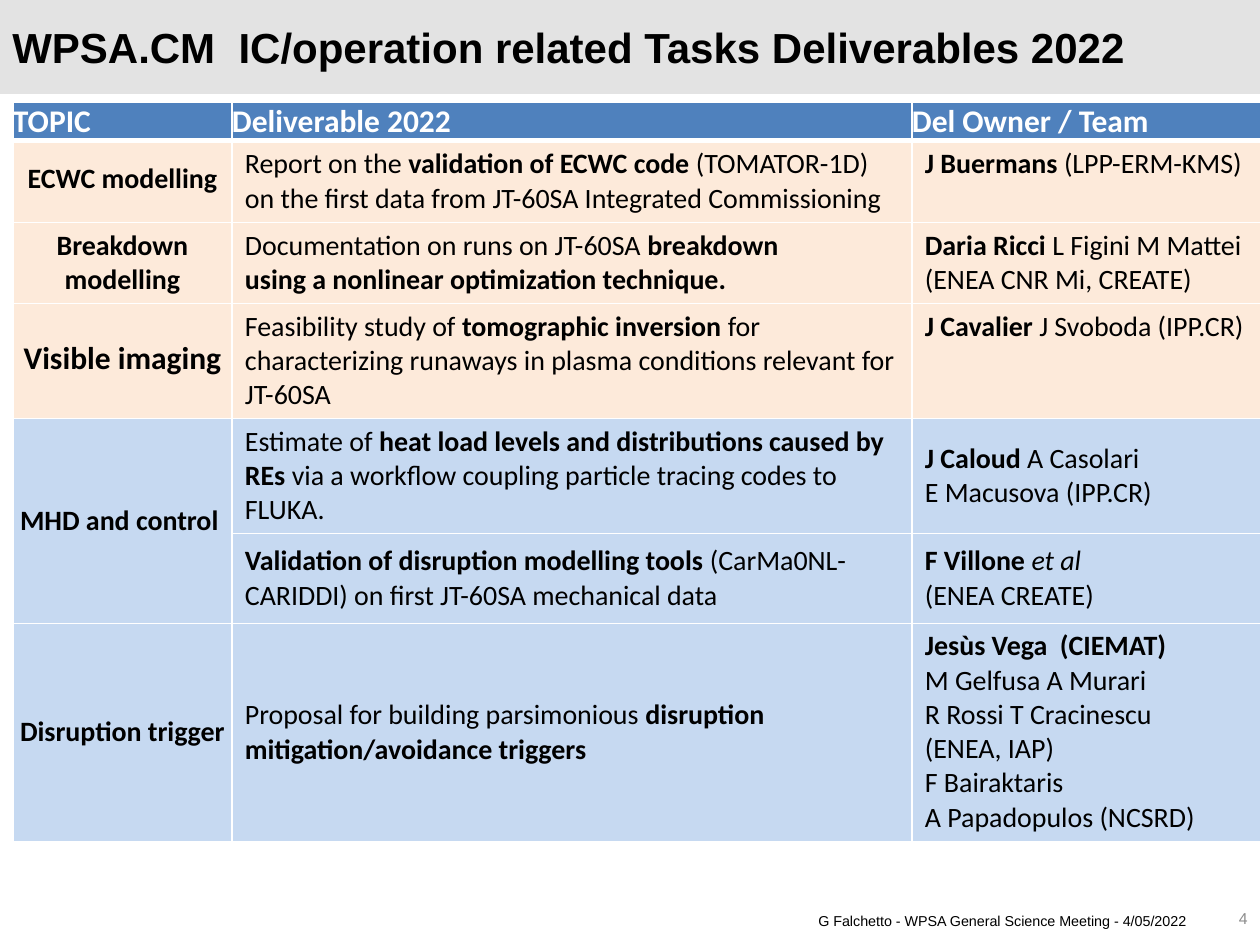
from dataclasses import dataclass

from lxml import etree
from pptx import Presentation
from pptx.dml.color import RGBColor
from pptx.enum import shapes, text
from pptx.oxml import ns
from pptx.util import Pt

PX = 914400 // 126  # EMU in one px

BLACK = RGBColor(0x00, 0x00, 0x00)
WHITE = RGBColor(0xFF, 0xFF, 0xFF)
BAND_GREY = RGBColor(0xE3, 0xE3, 0xE3)
NUMBER_GREY = RGBColor(0x8C, 0x8C, 0x8C)
HEADER_BLUE = RGBColor(0x4F, 0x81, 0xBD)
PEACH = RGBColor(0xFD, 0xEA, 0xDA)
PALE_BLUE = RGBColor(0xC6, 0xD9, 0xF1)

TOP, MIDDLE = text.MSO_ANCHOR.TOP, text.MSO_ANCHOR.MIDDLE
LEFT, CENTER, RIGHT = text.PP_ALIGN.LEFT, text.PP_ALIGN.CENTER, text.PP_ALIGN.RIGHT


@dataclass
class Span:
    text: str
    bold: bool = False
    italic: bool = False


@dataclass
class Entry:
    """One table cell: a list of paragraphs, each a list of spans."""
    paras: list[list[Span]]
    anchor: text.MSO_ANCHOR = MIDDLE
    align: text.PP_ALIGN = LEFT
    size: int = 16
    color: RGBColor = BLACK
    margins: tuple[int, int, int, int] = (13, 6, 13, 6)


@dataclass
class Row:
    height: int
    fill: RGBColor
    entries: list[Entry | None]  # None continues the cell above
    bottom_line: int = 1


@dataclass
class Label:
    text: str
    frame: tuple[int, int, int, int]
    size: float
    color: RGBColor
    align: text.PP_ALIGN = RIGHT
    bold: bool = False
    line_spacing: int | None = None


def bold(words: str) -> Span:
    return Span(words, bold=True)


def heading(words: str) -> Entry:
    return Entry([[bold(words)]], TOP, size=18, color=WHITE, margins=(0, 0, 0, 0))


def topic(words: str, size: int = 16, margins: tuple[int, int, int, int] = (0, 0, 0, 0)) -> Entry:
    return Entry([[bold(words)]], align=CENTER, size=size, margins=margins)


def people(*paras: list[Span], anchor: text.MSO_ANCHOR = TOP) -> Entry:
    return Entry(list(paras), anchor)


LOW_MARGINS = (1, 1, 1, 6)
COLUMNS = [219, 680, 349]
ROWS = [
    Row(38, HEADER_BLUE, [heading("TOPIC"), heading("Deliverable 2022"),
                          heading("Del Owner / Team")], bottom_line=3),
    Row(82, PEACH, [
        topic("ECWC modelling", margins=LOW_MARGINS),
        Entry([[Span("Report on the "), bold("validation of ECWC code "),
                Span("(TOMATOR-1D) on the first data from JT-60SA Integrated Commissioning")]]),
        people([bold("J Buermans "), Span("(LPP-ERM-KMS)")])]),
    Row(81, PEACH, [
        topic("Breakdown modelling"),
        Entry([[Span("Documentation on runs on JT-60SA "), bold("breakdown")],
               [bold("using a nonlinear optimization technique.")]]),
        people([bold("Daria Ricci "), Span("L Figini M Mattei")],
               [Span("(ENEA CNR Mi, CREATE)")])]),
    Row(115, PEACH, [
        topic("Visible imaging", 18, LOW_MARGINS),
        Entry([[Span("Feasibility study of "), bold("tomographic inversion "),
                Span("for characterizing runaways in plasma conditions relevant for JT-60SA")]],
              TOP),
        people([bold("J Cavalier "), Span("J Svoboda (IPP.CR)")])]),
    Row(115, PALE_BLUE, [
        topic("MHD and control "),
        Entry([[Span("Estimate of "), bold("heat load levels and distributions caused by REs "),
                Span("via a workflow coupling particle tracing codes to FLUKA.")]]),
        people([bold("J Caloud "), Span("A Casolari")],
               [Span("E Macusova (IPP.CR)")], anchor=MIDDLE)]),
    Row(90, PALE_BLUE, [
        None,
        Entry([[bold("Validation of disruption modelling tools "),
                Span("(CarMa0NL-CARIDDI) on first JT-60SA mechanical data")]]),
        people([bold("F Villone "), Span("et al", italic=True)],
               [Span("(ENEA CREATE)")], anchor=MIDDLE)]),
    Row(218, PALE_BLUE, [
        topic("Disruption trigger"),
        Entry([[Span("Proposal for building parsimonious "),
                bold("disruption mitigation/avoidance triggers")]]),
        people([bold("Jesùs Vega  (CIEMAT)")], [Span("M Gelfusa A Murari")],
               [Span("R Rossi T Cracinescu")], [Span("(ENEA, IAP)")],
               [Span("F Bairaktaris")], [Span("A Papadopulos (NCSRD)")])]),
]

LABELS = [
    Label("G Falchetto - WPSA General Science Meeting - 4/05/2022",
          (64, 902, 1135, 37), 8.2, BLACK),
    Label("4", (1174, 893, 86, 50), 9, NUMBER_GREY),
    Label("WPSA.CM  IC/operation related Tasks Deliverables 2022",
          (0, 19, 1160, 63), 24, BLACK, LEFT, bold=True, line_spacing=24),
]


def add_borders(cell, bottom_line: int) -> None:
    properties = cell._tc.get_or_add_tcPr()
    for side, width in (("L", 1), ("R", 1), ("T", 1), ("B", bottom_line)):
        line = etree.SubElement(properties, ns.qn(f"a:ln{side}"), w=str(Pt(width)))
        fill = etree.SubElement(line, ns.qn("a:solidFill"))
        etree.SubElement(fill, ns.qn("a:srgbClr"), val=str(WHITE))


def fill_cell(cell, entry: Entry) -> None:
    cell.vertical_anchor = entry.anchor
    (cell.margin_left, cell.margin_top,
     cell.margin_right, cell.margin_bottom) = (margin * PX for margin in entry.margins)
    frame = cell.text_frame
    for index, spans in enumerate(entry.paras):
        para = frame.add_paragraph() if index else frame.paragraphs[0]
        para.alignment = entry.align
        for span in spans:
            run = para.add_run()
            run.text = span.text
            font = run.font
            font.name, font.size = "Calibri", Pt(entry.size)
            font.bold, font.italic = span.bold, span.italic
            font.color.rgb = entry.color


def add_deliverables(page, left: int, top: int) -> None:
    height = sum(row.height for row in ROWS)
    table = page.shapes.add_table(len(ROWS), len(COLUMNS), left * PX, top * PX,
                                  sum(COLUMNS) * PX, height * PX).table
    table.horz_banding = False
    for column, width in zip(table.columns, COLUMNS):
        column.width = width * PX
    for y, row in enumerate(ROWS):
        table.rows[y].height = row.height * PX
        for x, entry in enumerate(row.entries):
            cell = table.cell(y, x)
            add_borders(cell, row.bottom_line)
            cell.fill.solid()
            cell.fill.fore_color.rgb = row.fill
            if entry is None:
                table.cell(y - 1, x).merge(cell)
            else:
                fill_cell(cell, entry)


def add_label(page, label: Label) -> None:
    box = page.shapes.add_textbox(*(length * PX for length in label.frame))
    frame = box.text_frame
    frame.word_wrap = True
    frame.vertical_anchor = MIDDLE
    frame.text = label.text
    para = frame.paragraphs[0]
    para.alignment = label.align
    if label.line_spacing:
        para.line_spacing = Pt(label.line_spacing)
    font = para.runs[0].font
    font.name, font.size, font.bold = "Arial", Pt(label.size), label.bold
    font.color.rgb = label.color


def main() -> None:
    deck = Presentation()
    deck.slide_width, deck.slide_height = 1260 * PX, 945 * PX
    page = deck.slides.add_slide(deck.slide_layouts[6])

    # Title band
    band = page.shapes.add_shape(shapes.MSO_SHAPE.RECTANGLE, 0, 0, 1260 * PX, 94 * PX)
    band.shadow.inherit = False
    band.fill.solid()
    band.fill.fore_color.rgb = BAND_GREY
    band.line.fill.background()

    # Table of deliverables
    add_deliverables(page, 13, 102)

    # Footer, page number and title
    for label in LABELS:
        add_label(page, label)

    deck.save("out.pptx")


if __name__ == "__main__":
    main()
